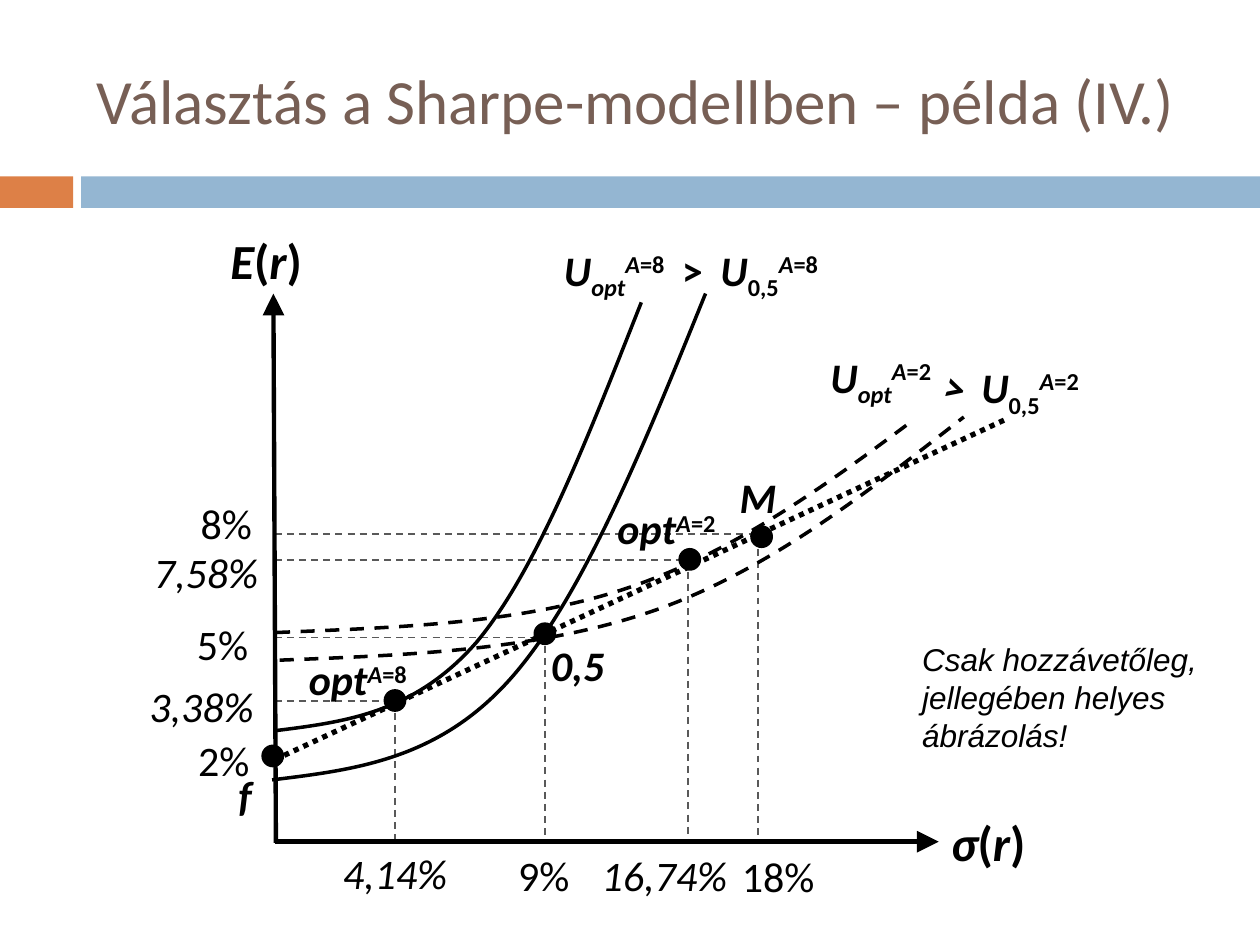
from dataclasses import dataclass
from typing import NamedTuple, Optional

import lxml.etree
import pptx
import pptx.dml.color
import pptx.enum.dml
import pptx.enum.shapes
import pptx.enum.text
import pptx.oxml.ns
import pptx.util

RGB = pptx.dml.color.RGBColor
ALIGN = pptx.enum.text.PP_ALIGN
ANCHOR = pptx.enum.text.MSO_ANCHOR
FIT = pptx.enum.text.MSO_AUTO_SIZE
DASH = pptx.enum.dml.MSO_LINE
SHAPE = pptx.enum.shapes.MSO_SHAPE

BLACK, GREY = RGB(0, 0, 0), RGB(0x59, 0x59, 0x59)
ORANGE, BLUE = RGB(0xDD, 0x80, 0x47), RGB(0x94, 0xB6, 0xD2)
BROWN = RGB(0x77, 0x5F, 0x55)

# The slide is a grid of 100 columns by 75 rows of square cells
COLS, ROWS = 100, 75
CELL = pptx.util.Inches(0.1)
AXIS_X, AXIS_Y = 21.8, 66.8
DOT = 1.6


class Run(NamedTuple):
    text: str
    bold: bool = False
    italic: bool = False
    baseline: int = 0


@dataclass
class Label:
    col: float
    row: float
    width: float
    runs: list[Run]
    height: float = 5
    size: int = 24
    align: ALIGN = ALIGN.CENTER
    font: str = "Calibri"
    color: RGB = BLACK
    rotation: float = 0
    anchor: ANCHOR = ANCHOR.TOP
    fit: FIT = FIT.SHAPE_TO_FIT_TEXT


@dataclass
class Point:
    col: float
    row: float
    guide_col: Optional[float] = None
    guide_row: Optional[float] = None


@dataclass
class Curve:
    knots: list[tuple[float, float]]  # two cubic Bézier pieces sharing a knot
    dash: Optional[DASH] = None


def cells(n: float) -> int:
    return round(n * CELL)


def style_line(line, color: RGB, width: float, dash: Optional[DASH] = None) -> None:
    line.color.rgb = color
    line.width = pptx.util.Pt(width)
    if dash is not None:
        line.dash_style = dash


def draw_shape(s, kind: SHAPE, box: tuple, color: RGB, outline: float = 0) -> None:
    sp = s.shapes.add_shape(kind, *map(cells, box))
    sp.shadow.inherit = False
    sp.fill.solid()
    sp.fill.fore_color.rgb = color
    if outline:
        style_line(sp.line, color, outline)
    else:
        sp.line.fill.background()


def draw_line(s, start: tuple, end: tuple, color: RGB, width: float,
              dash: Optional[DASH] = None, arrow: bool = False) -> None:
    cx = s.shapes.add_connector(pptx.enum.shapes.MSO_CONNECTOR.STRAIGHT,
                                *map(cells, start + end))
    style_line(cx.line, color, width, dash)
    if arrow:
        lxml.etree.SubElement(cx.line._get_or_add_ln(), pptx.oxml.ns.qn("a:tailEnd"),
                              type="triangle", w="lg", len="lg")
    lxml.etree.SubElement(cx._element.spPr, pptx.oxml.ns.qn("a:effectLst"))


def draw_curve(s, curve: Curve) -> None:
    start, *rest = [tuple(map(cells, knot)) for knot in curve.knots]
    fb = s.shapes.build_freeform(*start)
    fb.add_line_segments(rest, close=False)
    sp = fb.convert_to_shape()
    # Every three straight segments become one cubic Bézier piece
    segments = list(sp._element.iter(pptx.oxml.ns.qn("a:lnTo")))
    outline = segments[0].getparent()
    for i in range(0, len(segments), 3):
        piece = lxml.etree.SubElement(outline, pptx.oxml.ns.qn("a:cubicBezTo"))
        for segment in segments[i:i + 3]:
            piece.append(segment[0])
            outline.remove(segment)
    sp.shadow.inherit = False
    sp.fill.background()
    style_line(sp.line, BLACK, 2, curve.dash)


def draw_label(s, label: Label) -> None:
    sp = s.shapes.add_textbox(*map(cells, (label.col, label.row, label.width, label.height)))
    sp.rotation = label.rotation
    tf = sp.text_frame
    tf.word_wrap = True
    tf.auto_size = label.fit
    tf.vertical_anchor = label.anchor
    p = tf.paragraphs[0]
    p.alignment = label.align
    for run in label.runs:
        r = p.add_run()
        r.text = run.text
        r.font.name, r.font.size = label.font, pptx.util.Pt(label.size)
        r.font.bold, r.font.italic = run.bold, run.italic
        r.font.color.rgb = label.color
        if run.baseline:
            r._r.get_or_add_rPr().set("baseline", str(run.baseline * 1000))


def strong(text: str, italic: bool = True, baseline: int = 0) -> Run:
    return Run(text, True, italic, baseline)


def aversion(a: int) -> list[Run]:
    return [strong("A", baseline=30), strong(f"={a}", False, 30)]


def utility(sub: str, a: int) -> list[Run]:
    return [strong("U"), strong(sub, sub == "opt", -25)] + aversion(a)


def axis_name(symbol: str) -> list[Run]:
    return [strong(symbol), strong("(", False), strong("r"), strong(")", False)]


POINTS = [
    Point(21.65, 60),
    Point(31.35, 55.6, 31.35, 55.65),
    Point(43.25, 50.3, 43.25, 50.6),
    Point(54.75, 44.4, 54.6, 44.45),
    Point(60.45, 42.6, 60.15, 42.4),
]

CURVES = [
    Curve([(21.8, 58), (27.4, 57.3), (32.9, 56.6), (37.8, 51),
           (42.6, 45.3), (46.7, 34.6), (50.9, 24)]),
    Curve([(21.6, 61.9), (28.2, 61.1), (34.8, 60.3), (40.5, 53.9),
           (46.2, 47.5), (51.1, 35.4), (56, 23.3)]),
    Curve([(22.2, 52.4), (32.6, 52), (43, 51.6), (52.1, 48.4),
           (61.1, 45.2), (68.8, 39.1), (76.5, 33.1)], DASH.DASH),
    Curve([(21.9, 50.2), (31.6, 49.8), (41.3, 49.5), (49.7, 46.7),
           (58.1, 43.9), (65.3, 38.7), (72.4, 33.4)], DASH.DASH),
]

LABELS = [
    Label(6.7, 2.5, 89.2, [Run("Választás a Sharpe-modellben – példa (IV.)")], 10.8, 36,
          ALIGN.LEFT, color=BROWN, anchor=ANCHOR.MIDDLE, fit=FIT.NONE),
    # Axis names
    Label(17.3, 17.8, 9.3, axis_name("E"), 5.7, 28, ALIGN.LEFT),
    Label(74.5, 64, 9.3, axis_name("σ"), 5.7, 28, ALIGN.LEFT),
    # Expected returns
    Label(14, 39, 7.9, [Run("8%")]),
    Label(10.5, 42.9, 11.7, [Run("7,58%", italic=True)]),
    Label(13.7, 48.6, 7.9, [Run("5%")]),
    Label(10.5, 53.5, 11, [Run("3,38%", italic=True)]),
    Label(13.8, 57.8, 7.9, [Run("2%")]),
    # Standard deviations
    Label(25.9, 66.8, 10.9, [Run("4,14%", italic=True)]),
    Label(39.2, 66.9, 7.9, [Run("9%")]),
    Label(45.5, 66.9, 13.2, [Run("16,74%", italic=True)], align=ALIGN.RIGHT),
    Label(57.8, 67, 7.9, [Run("18%")]),
    # Point names
    Label(17.5, 60.6, 3.9, [strong("f")]),
    Label(22.6, 51.4, 11.6, [strong("opt")] + aversion(8)),
    Label(42, 50.3, 7.7, [strong("0,5")]),
    Label(47.1, 39.4, 11.6, [strong("opt")] + aversion(2)),
    Label(57.6, 36.9, 5.1, [strong("M")]),
    # Utility comparisons
    Label(42.6, 18.9, 12.3, utility("opt", 8)),
    Label(53, 18.9, 3.9, [strong(">", False)]),
    Label(55.6, 18.9, 10.9, utility("0,5", 8)),
    Label(63.3, 27.4, 13.2, utility("opt", 2)),
    Label(73, 28.2, 5.7, [strong(">", False)], rotation=16.4),
    Label(76.3, 28.2, 10.9, utility("0,5", 2)),
    # Remark
    Label(72.2, 50.3, 25.9, [Run("Csak hozzávetőleg, jellegében helyes ábrázolás!", italic=True)],
          10.1, 18, ALIGN.LEFT, "Arial"),
]


def main() -> None:
    prs = pptx.Presentation()
    prs.slide_width, prs.slide_height = COLS * CELL, ROWS * CELL
    s = prs.slides.add_slide(prs.slide_layouts[6])

    # Header band
    draw_shape(s, SHAPE.RECTANGLE, (0, 14, 5.8, 2.5), ORANGE)
    draw_shape(s, SHAPE.RECTANGLE, (6.45, 14, 93.55, 2.5), BLUE)

    # Guides from each point to both axes
    for pt in POINTS:
        if pt.guide_col is not None:
            draw_line(s, (AXIS_X, pt.guide_row), (pt.col, pt.guide_row), GREY, 1, DASH.DASH)
            draw_line(s, (pt.guide_col, pt.row), (pt.guide_col, AXIS_Y), GREY, 1, DASH.DASH)

    # Capital market line, indifference curves and axes
    draw_line(s, (AXIS_X, 60.3), (80, 33.2), BLACK, 3, DASH.ROUND_DOT)
    for curve in CURVES:
        draw_curve(s, curve)
    draw_line(s, (21.9, 66.9), (21.7, 23.3), BLACK, 2.5, arrow=True)
    draw_line(s, (AXIS_X, AXIS_Y), (74.5, AXIS_Y), BLACK, 2.5, arrow=True)

    # Labels, then the points on top
    for label in LABELS:
        draw_label(s, label)
    for pt in POINTS:
        draw_shape(s, SHAPE.OVAL, (pt.col - DOT / 2, pt.row - DOT / 2, DOT, DOT), BLACK, 1.5)

    prs.save("out.pptx")


if __name__ == "__main__":
    main()
